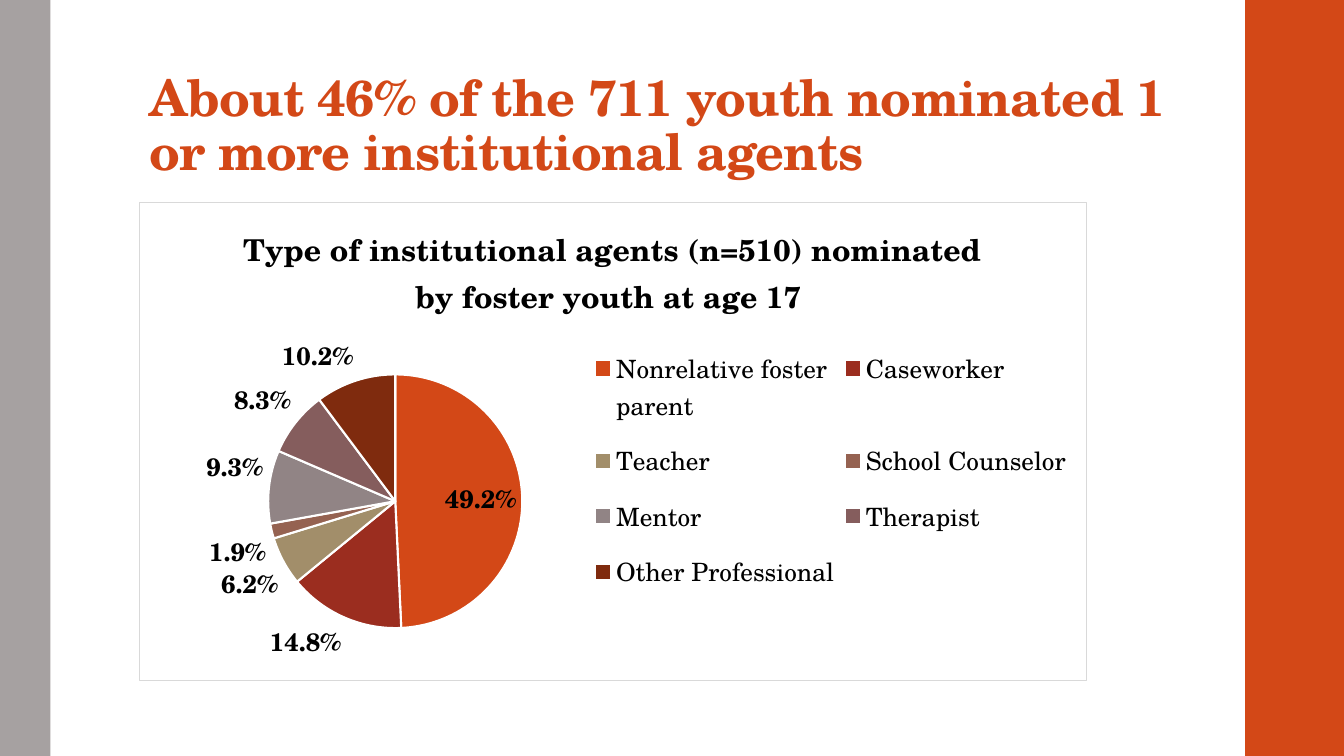
from pptx import Presentation, util as u
from pptx.chart.data import CategoryChartData
from pptx.dml.color import RGBColor
from pptx.enum import chart as charts, shapes, text
from pptx.oxml import parse_xml
from pptx.oxml.ns import nsdecls, qn

FONT = "TeX Gyre Schola"
COLORS = {"accent": "D34817", "side": "A6A1A1", "black": "000000",
          "white": "FFFFFF", "border": "D9D9D9"}
AGENTS = [
    ("Nonrelative foster\nparent", 0.492, "D34817"),
    ("Caseworker", 0.148, "9B2D1F"),
    ("Teacher", 0.062, "A28E6A"),
    ("School Counselor", 0.019, "956251"),
    ("Mentor", 0.093, "918485"),
    ("Therapist", 0.083, "855D5D"),
    ("Other Professional", 0.102, "7F2B0E"),
]


def inches(box):
    """Convert a box of left, top, width and height to lengths."""
    return [u.Inches(length) for length in box]


def style_font(font, size, color, bold=False):
    """Set the typeface, size, colour and weight of a font."""
    font.name, font.size, font.bold = FONT, u.Pt(size), bold
    font.color.rgb = RGBColor.from_string(color)


def add_bar(slide, box, color):
    """Add a plain coloured bar at the edge of the slide."""
    bar = slide.shapes.add_shape(shapes.MSO_SHAPE.RECTANGLE, *inches(box))
    bar.shadow.inherit = False
    bar.fill.solid()
    bar.fill.fore_color.rgb = RGBColor.from_string(color)
    bar.line.fill.background()


def fill_title(slide, box, wording):
    """Place and format the slide title."""
    title = slide.shapes.title
    title.left, title.top, title.width, title.height = inches(box)
    frame = title.text_frame
    frame.text = wording
    frame.word_wrap = True
    frame.auto_size = text.MSO_AUTO_SIZE.NONE
    frame.vertical_anchor = text.MSO_ANCHOR.BOTTOM
    frame.margin_left = frame.margin_right = u.Inches(0.1)
    frame.margin_top, frame.margin_bottom = u.Inches(0.03), u.Inches(0.05)
    paragraph = frame.paragraphs[0]
    paragraph.alignment = text.PP_ALIGN.LEFT
    paragraph.line_spacing = 0.9
    run = paragraph.runs[0]
    style_font(run.font, 36, COLORS["accent"], True)
    run._r.get_or_add_rPr().set("spc", "-50")


def set_layout(parent, index, box, inner=False):
    """Fix the place of a chart part as shares of the chart."""
    for old in parent.findall(qn("c:layout")):
        parent.remove(old)
    target = '<c:layoutTarget val="inner"/>' if inner else ""
    modes = "".join(f'<c:{side}Mode val="edge"/>' for side in "xy")
    sizes = "".join(f'<c:{name} val="{share}"/>' for name, share in zip("xywh", box))
    parent.insert(index, parse_xml(
        f'<c:layout {nsdecls("c")}><c:manualLayout>{target}{modes}{sizes}'
        '</c:manualLayout></c:layout>'))


def frame_chart(chart):
    """Give the chart area a white fill and a thin border."""
    chart.element.find(qn("c:chart")).addnext(parse_xml(
        f'<c:spPr {nsdecls("c", "a")}>'
        f'<a:solidFill><a:srgbClr val="{COLORS["white"]}"/></a:solidFill>'
        f'<a:ln w="9525"><a:solidFill><a:srgbClr val="{COLORS["border"]}"/>'
        '</a:solidFill></a:ln></c:spPr>'))


def style_slices(plot):
    """Colour the slices and label them with their shares."""
    plot.vary_by_categories = True
    series = plot.series[0]
    for index, (_, _, color) in enumerate(AGENTS):
        point = series.points[index]
        point.format.fill.solid()
        point.format.fill.fore_color.rgb = RGBColor.from_string(color)
        point.format.line.color.rgb = RGBColor.from_string(COLORS["white"])
        point.format.line.width = u.Pt(1.5)
    labels = series.data_labels
    labels.show_value = True
    labels.number_format, labels.number_format_is_linked = "0.0%", False
    labels.position = charts.XL_LABEL_POSITION.OUTSIDE_END
    style_font(labels.font, 18, COLORS["black"], True)
    largest = series.points[0].data_label
    style_font(largest.font, 18, COLORS["black"], True)
    largest.position = charts.XL_LABEL_POSITION.INSIDE_END


def add_agents_chart(slide, box):
    """Add the pie of institutional agents with title and legend."""
    data = CategoryChartData(number_format="0.0%")
    data.categories = [name for name, _, _ in AGENTS]
    data.add_series("Series 1", [share for _, share, _ in AGENTS])
    chart = slide.shapes.add_chart(
        charts.XL_CHART_TYPE.PIE, *inches(box), data).chart
    style_font(chart.font, 18, COLORS["black"])
    frame_chart(chart)
    chart.has_title = True
    heading = chart.chart_title.text_frame
    heading.text = ("Type of institutional agents (n=510) nominated "
                    "by foster youth at age 17 ")
    style_font(heading.paragraphs[0].runs[0].font, 21.6, COLORS["black"], True)
    chart.has_legend = True
    legend = chart.legend
    legend.position = charts.XL_LEGEND_POSITION.RIGHT
    legend.include_in_layout = False
    style_font(legend.font, 18, COLORS["black"])
    plot_area = chart.element.find(".//" + qn("c:plotArea"))
    set_layout(plot_area, 0, (0.13, 0.36, 0.28, 0.53), inner=True)
    set_layout(chart.element.find(".//" + qn("c:legend")), 1, (0.47, 0.27, 0.52, 0.58))
    style_slices(chart.plots[0])


def main():
    """Build and save the presentation."""
    presentation = Presentation()
    width, height = 13.33, 7.5
    presentation.slide_width = u.Inches(width)
    presentation.slide_height = u.Inches(height)
    slide = presentation.slides.add_slide(presentation.slide_layouts[5])
    left = 1.38
    add_bar(slide, (width - 0.98, 0, 0.98, height), COLORS["accent"])
    add_bar(slide, (0, 0, 0.5, height), COLORS["side"])
    fill_title(slide, (left, 0.32, 10.6, 1.53),
               "About 46% of the 711 youth nominated 1 or more institutional agents")
    add_agents_chart(slide, (left, 2, 9.4, 4.76))
    presentation.save("out.pptx")


if __name__ == "__main__":
    main()
